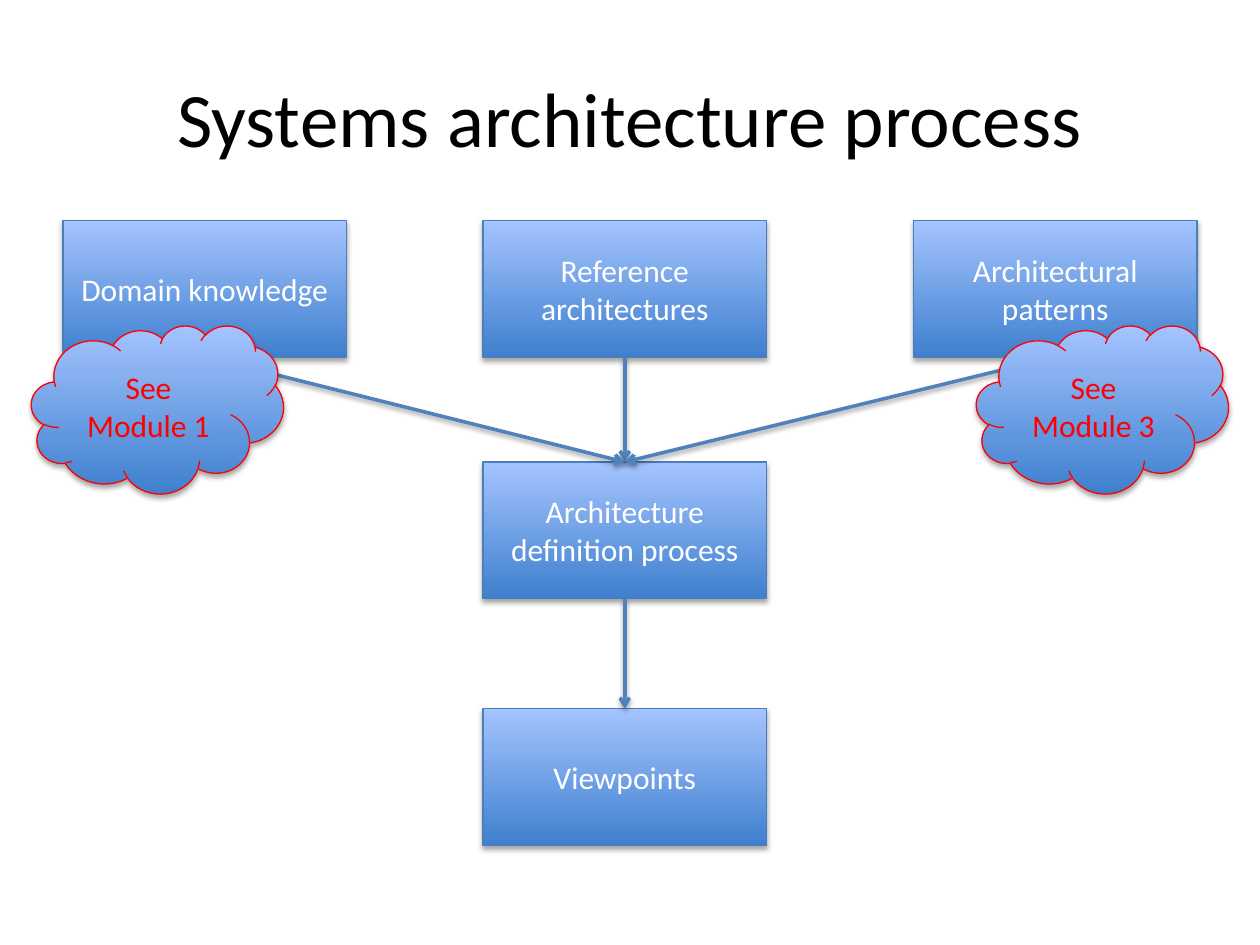
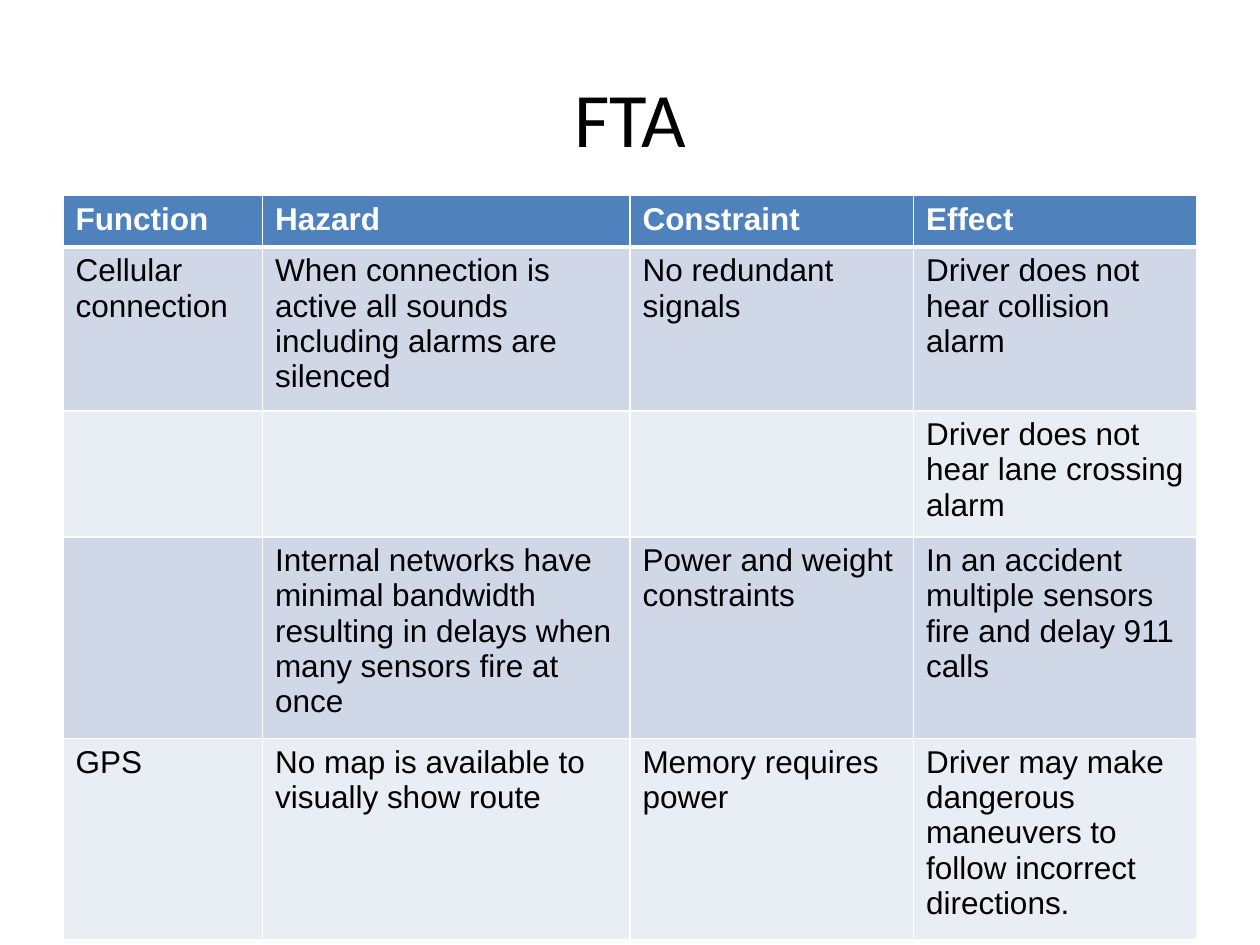
from pptx import Presentation
from pptx.dml.color import RGBColor
from pptx.enum.shapes import MSO_CONNECTOR as LINE, MSO_SHAPE as SHAPE
from pptx.enum.text import MSO_ANCHOR as ANCHOR, PP_ALIGN as ALIGN
from pptx.oxml import parse_xml
from pptx.oxml.ns import nsdecls
from pptx.util import Inches, Pt

COLORS = {name: RGBColor.from_string(code) for name, code in {
    "black": "000000", "white": "FFFFFF", "red": "FF0000",
    "accent": "4F81BD", "edge": "4B7EBC",
    "deep": "3F80CE", "light": "A4C4FF",
    "band": "D0D8E8", "pale": "E9EDF4",
}.items()}

deck = Presentation()
deck.slide_width, deck.slide_height = Inches(10), Inches(7.5)
UNIT = deck.slide_width / 120
BOX_WIDTH, BOX_HEIGHT = 27, 13
LEFT, MIDDLE, RIGHT = 6, 46, 87
TOP, CENTER, BOTTOM = 21, 44, 67.5


def write(frame, text, size=18, font="Calibri", color="white", bold=False,
          align=ALIGN.CENTER, anchor=ANCHOR.MIDDLE):
    frame.word_wrap = True
    frame.vertical_anchor = anchor
    para = frame.paragraphs[0]
    para.alignment = align
    span = para.add_run()
    span.text = text
    span.font.size = Pt(size)
    span.font.name = font
    span.font.bold = bold
    span.font.color.rgb = COLORS[color]


def add_shadow(item, distance, opacity):
    item._element.spPr.append(parse_xml(
        f'<a:effectLst {nsdecls("a")}>'
        f'<a:outerShdw blurRad="{Pt(3.1)}" dist="{Pt(distance)}" dir="5400000" rotWithShape="0">'
        f'<a:srgbClr val="{COLORS["black"]}"><a:alpha val="{opacity * 1000}"/></a:srgbClr>'
        '</a:outerShdw></a:effectLst>'))


pages = []
for title in ["Systems architecture process", "FTA"]:
    page = deck.slides.add_slide(deck.slide_layouts[6])
    heading = page.shapes.add_textbox(*[int(n * UNIT) for n in (LEFT, 3.6, 108, 15)])
    write(heading.text_frame, title, size=44, color="black")
    pages.append(page)
process_page, table_page = pages

box_format = (SHAPE.RECTANGLE, BOX_WIDTH, BOX_HEIGHT, "edge", "white")
cloud_format = (SHAPE.CLOUD, 24, 16, "red", "red")
arrows = [
    ("Reference architectures", "Architecture definition process"),
    ("Architectural patterns", "Architecture definition process"),
    ("Domain knowledge", "Architecture definition process"),
    ("Architecture definition process", "Viewpoints"),
]
layers = [
    (box_format, [
        ("Domain knowledge", LEFT, TOP),
        ("Reference architectures", MIDDLE, TOP),
        ("Architectural patterns", RIGHT, TOP),
        ("Architecture definition process", MIDDLE, CENTER),
        ("Viewpoints", MIDDLE, BOTTOM),
    ], arrows),
    (cloud_format, [("See Module 3", 93, 31), ("See Module 1", 3, 31)], []),
]
for (kind, width, height, edge, ink), items, links in layers:
    boxes = {}
    for text, column, row in items:
        box = process_page.shapes.add_shape(
            kind, *[int(n * UNIT) for n in (column, row, width, height)])
        box.fill.gradient()
        box.fill.gradient_angle = 90
        for stop, shade in zip(box.fill.gradient_stops, ("deep", "light")):
            stop.color.rgb = COLORS[shade]
        box.line.color.rgb = COLORS[edge]
        box.line.width = Pt(0.75)
        add_shadow(box, 1.8, 35)
        write(box.text_frame, text, color=ink)
        boxes[text] = box
    for source, target in links:
        arrow = process_page.shapes.add_connector(LINE.STRAIGHT, 0, 0, 0, 0)
        arrow.begin_connect(boxes[source], 2)
        arrow.end_connect(boxes[target], 0)
        arrow.line.color.rgb = COLORS["accent"]
        arrow.line.width = Pt(2)
        arrow.line._get_or_add_ln().append(
            parse_xml(f'<a:tailEnd {nsdecls("a")} type="arrow"/>'))
        add_shadow(arrow, 1.6, 38)

hazard_rows = [
    ["Function", "Hazard", "Constraint", "Effect"],
    ["Cellular connection",
     "When connection is active all sounds including alarms are silenced",
     "No redundant signals", "Driver does not hear collision alarm"],
    ["", "", "", "Driver does not hear lane crossing alarm"],
    ["",
     "Internal networks have minimal bandwidth resulting in delays when many sensors fire at once",
     "Power and weight constraints",
     "In an accident multiple sensors fire and delay 911 calls"],
    ["GPS", "No map is available to visually show route", "Memory requires power",
     "Driver may make dangerous maneuvers to follow incorrect directions."],
]
column_units = [19, 35, 27, 27]
row_height = Inches(0.41)
table = table_page.shapes.add_table(
    len(hazard_rows), len(column_units), int(LEFT * UNIT), int(18.6 * UNIT),
    int(sum(column_units) * UNIT), row_height * len(hazard_rows)).table
for column, units in zip(table.columns, column_units):
    column.width = int(units * UNIT)
for row_index, texts in enumerate(hazard_rows):
    table.rows[row_index].height = row_height
    is_header = row_index == 0
    fill = "accent" if is_header else ("pale", "band")[row_index % 2]
    borders = {"L": 1, "R": 1, "T": 3 if row_index == 1 else 1, "B": 3 if is_header else 1}
    for column_index, text in enumerate(texts):
        cell = table.cell(row_index, column_index)
        for side, weight in borders.items():
            cell._tc.get_or_add_tcPr().append(parse_xml(
                f'<a:ln{side} {nsdecls("a")} w="{Pt(weight)}"><a:solidFill>'
                f'<a:srgbClr val="{COLORS["white"]}"/></a:solidFill></a:ln{side}>'))
        cell.fill.solid()
        cell.fill.fore_color.rgb = COLORS[fill]
        if text:
            write(cell.text_frame, text, font="Arial", bold=is_header,
                  color="white" if is_header else "black",
                  align=ALIGN.LEFT, anchor=ANCHOR.TOP)

deck.save("out.pptx")
